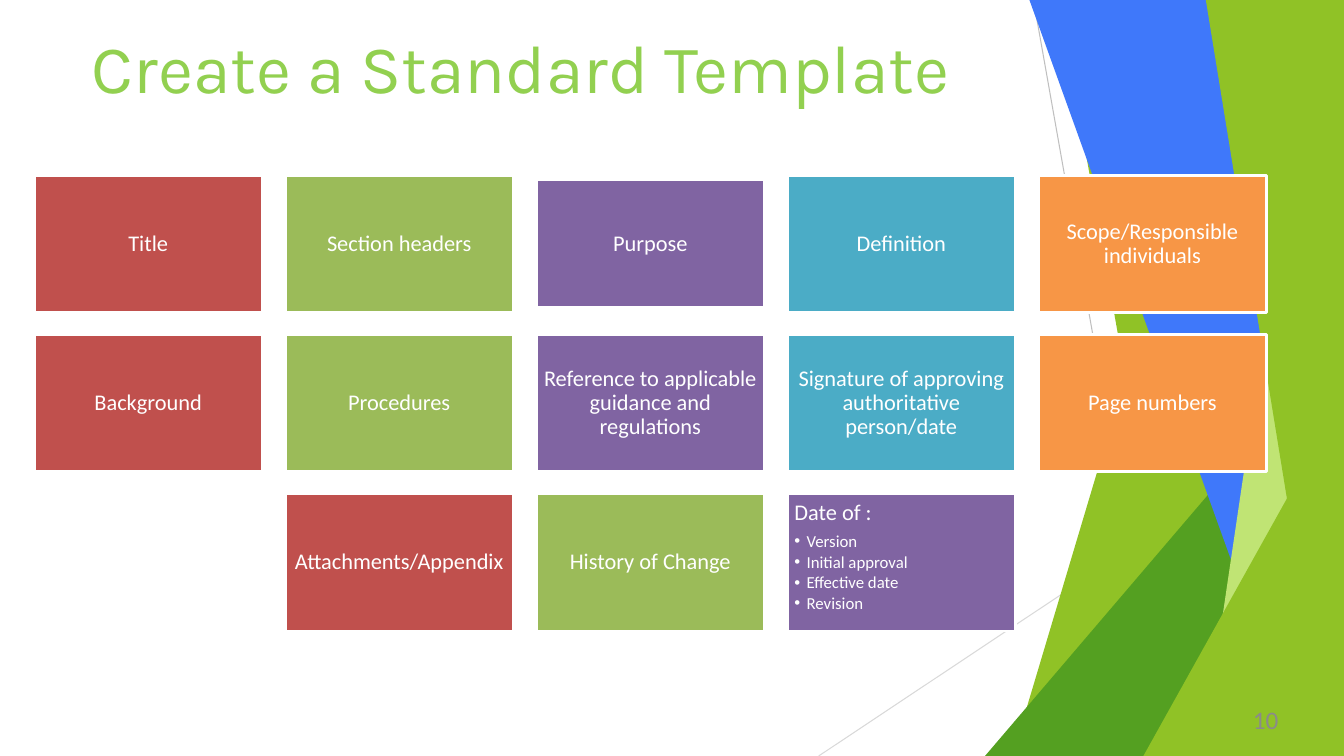
from dataclasses import dataclass

import lxml.etree
import pptx
import pptx.dml.color
import pptx.enum.shapes
import pptx.enum.text
import pptx.oxml.ns
import pptx.util

Inches = pptx.util.Inches
Pt = pptx.util.Pt
Anchor = pptx.enum.text.MSO_ANCHOR
Align = pptx.enum.text.PP_ALIGN
Point = tuple[float, float]

COLORS = {
    "white": "FFFFFF", "title": "92D050", "page number": "8B8B8B",
    "gray": "BFBFBF", "light gray": "D9D9D9",
    "green": "90C226", "dark green": "54A021", "light green": "C0E474", "bright blue": "3F78FA",
    "red": "C0504D", "olive": "9BBB59", "purple": "8064A2", "teal": "4BACC6", "orange": "F79646",
}
CARD_COLORS = ["red", "olive", "purple", "teal", "orange"]
SLIDE_WIDTH, SLIDE_HEIGHT = 13.33, 7.5
CARD_WIDTH, CARD_HEIGHT = 2.26, 1.36
GRID_LEFT, GRID_TOP = 0.34, 1.74
COLUMN_PITCH, ROW_PITCH = 2.49, 1.58
COLUMNS = 5


@dataclass
class Band:
    color: str
    points: list[Point]


@dataclass
class Ray:
    color: str
    start: Point
    end: Point


@dataclass
class Card:
    label: str
    height: float = CARD_HEIGHT
    items: tuple[str, ...] = ()


RAYS = [
    Ray("gray", (10.25, 0), (11.58, SLIDE_HEIGHT)),
    Ray("light gray", (SLIDE_WIDTH, 4.03), (8.12, SLIDE_HEIGHT)),
]
# Each band also takes in the bottom right corner of the slide.
BANDS = [
    Band("green", [(10.04, SLIDE_HEIGHT), (12.28, 0), (SLIDE_WIDTH, 0)]),
    Band("green", [(11.83, SLIDE_HEIGHT), (10.5, 0), (SLIDE_WIDTH, 0)]),
    Band("dark green", [(9.77, SLIDE_HEIGHT), (SLIDE_WIDTH, 3.33)]),
    Band("bright blue", [(12.91, SLIDE_HEIGHT), (10.21, 0), (SLIDE_WIDTH, 0)]),
    Band("light green", [(11.92, SLIDE_HEIGHT), (13.03, 0), (SLIDE_WIDTH, 0)]),
    Band("green", [(13.18, SLIDE_HEIGHT), (11.96, 0), (SLIDE_WIDTH, 0)]),
    Band("green", [(11.34, SLIDE_HEIGHT), (SLIDE_WIDTH, 3.93)]),
]
CARD_ROWS = [
    [Card("Title"), Card("Section headers"), Card("Purpose", height=1.27),
     Card("Definition"), Card("Scope/Responsible individuals")],
    [Card("Background"), Card("Procedures"),
     Card("Reference to applicable guidance and regulations"),
     Card("Signature of approving authoritative person/date"), Card("Page numbers")],
    [Card("Attachments/Appendix"), Card("History of Change"),
     Card("Date of :", items=("Version", "Initial approval", "Effective date", "Revision"))],
]


def rgb(name: str) -> pptx.dml.color.RGBColor:
    return pptx.dml.color.RGBColor.from_string(COLORS[name])


def place(shape, left: float, top: float, width: float, height: float) -> None:
    shape.left, shape.top = Inches(left), Inches(top)
    shape.width, shape.height = Inches(width), Inches(height)


def set_frame(frame, margin: float, anchor) -> None:
    frame.word_wrap = True
    frame.auto_size = pptx.enum.text.MSO_AUTO_SIZE.NONE
    frame.vertical_anchor = anchor
    frame.margin_left = frame.margin_right = Inches(margin)
    frame.margin_top = frame.margin_bottom = Inches(margin)


def format_paragraph(paragraph, font: str, size: float, color: str, alignment) -> None:
    paragraph.alignment = alignment
    paragraph.font.name = font
    paragraph.font.size = Pt(size)
    paragraph.font.color.rgb = rgb(color)


def set_bullet(paragraph, character: str = "", indent: float = 0) -> None:
    """Hang the paragraph on a bullet, or remove its bullet when no character is given."""
    properties = paragraph._p.get_or_add_pPr()
    properties.set("marL", str(Inches(indent)))
    properties.set("indent", str(-Inches(indent)))
    tag = "a:buChar" if character else "a:buNone"
    bullet = lxml.etree.SubElement(properties, pptx.oxml.ns.qn(tag))
    if character:
        bullet.set("char", character)
    default_font = properties.find(pptx.oxml.ns.qn("a:defRPr"))
    if default_font is not None:
        properties.append(default_font)


def draw_ray(slide, ray: Ray) -> None:
    ends = [Inches(value) for value in ray.start + ray.end]
    connector = slide.shapes.add_connector(pptx.enum.shapes.MSO_CONNECTOR.STRAIGHT, *ends)
    connector.line.color.rgb = rgb(ray.color)
    connector.line.width = Pt(0.75)
    lxml.etree.SubElement(connector._element.spPr, pptx.oxml.ns.qn("a:effectLst"))


def draw_band(slide, band: Band) -> None:
    builder = slide.shapes.build_freeform(Inches(SLIDE_WIDTH), Inches(SLIDE_HEIGHT))
    builder.add_line_segments([(Inches(x), Inches(y)) for x, y in band.points], close=True)
    shape = builder.convert_to_shape()
    shape.fill.solid()
    shape.fill.fore_color.rgb = rgb(band.color)
    shape.line.fill.background()
    shape.shadow.inherit = False


def draw_card(shape, card: Card, color: str, left: float, top: float) -> None:
    place(shape, left, top + (CARD_HEIGHT - card.height) / 2, CARD_WIDTH, card.height)
    shape.fill.solid()
    shape.fill.fore_color.rgb = rgb(color)
    shape.line.color.rgb = rgb("white")
    shape.line.width = Pt(2)
    frame = shape.text_frame
    set_frame(frame, 0.07, Anchor.TOP if card.items else Anchor.MIDDLE)
    frame.text = "\n".join((card.label, *card.items))
    for index, paragraph in enumerate(frame.paragraphs):
        is_item = index > 0
        paragraph.level = int(is_item)
        paragraph.line_spacing = 0.9
        paragraph.space_before = Pt(0)
        paragraph.space_after = Pt(1.8 if is_item else 5.6)
        format_paragraph(paragraph, "Calibri", 12 if is_item else 16, "white",
                         Align.LEFT if card.items else Align.CENTER)
        if is_item:
            set_bullet(paragraph, "•", 0.12)
        else:
            set_bullet(paragraph)


def draw_cards(slide, list_placeholder) -> None:
    for row, cards in enumerate(CARD_ROWS):
        first_column = (COLUMNS - len(cards)) / 2
        for index, card in enumerate(cards):
            if card.items:
                shape = list_placeholder
                shape._element.getparent().append(shape._element)
            else:
                shape = slide.shapes.add_shape(
                    pptx.enum.shapes.MSO_SHAPE.RECTANGLE, 0, 0, 0, 0)
                shape.shadow.inherit = False
            draw_card(shape, card, CARD_COLORS[index],
                      GRID_LEFT + (first_column + index) * COLUMN_PITCH,
                      GRID_TOP + row * ROW_PITCH)


def draw_title(title) -> None:
    place(title, -0.5, 0.25, 11.33, 1.14)
    set_frame(title.text_frame, 0, Anchor.TOP)
    title.text_frame.text = "Create a Standard Template"
    format_paragraph(title.text_frame.paragraphs[0], "Karla", 48.6, "title", Align.CENTER)


def draw_page_number(slide) -> None:
    box = slide.shapes.add_textbox(0, 0, 0, 0)
    place(box, 11.68, 6.94, 1, 0.4)
    set_frame(box.text_frame, 0, Anchor.MIDDLE)
    box.text_frame.text = "10"
    format_paragraph(box.text_frame.paragraphs[0], "Calibri", 18, "page number", Align.RIGHT)


def main() -> None:
    presentation = pptx.Presentation()
    presentation.slide_width = Inches(SLIDE_WIDTH)
    presentation.slide_height = Inches(SLIDE_HEIGHT)
    slide = presentation.slides.add_slide(presentation.slide_layouts[1])
    for ray in RAYS:
        draw_ray(slide, ray)
    for band in BANDS:
        draw_band(slide, band)
    draw_title(slide.shapes.title)
    draw_cards(slide, slide.placeholders[1])
    draw_page_number(slide)
    presentation.save("out.pptx")


if __name__ == "__main__":
    main()
